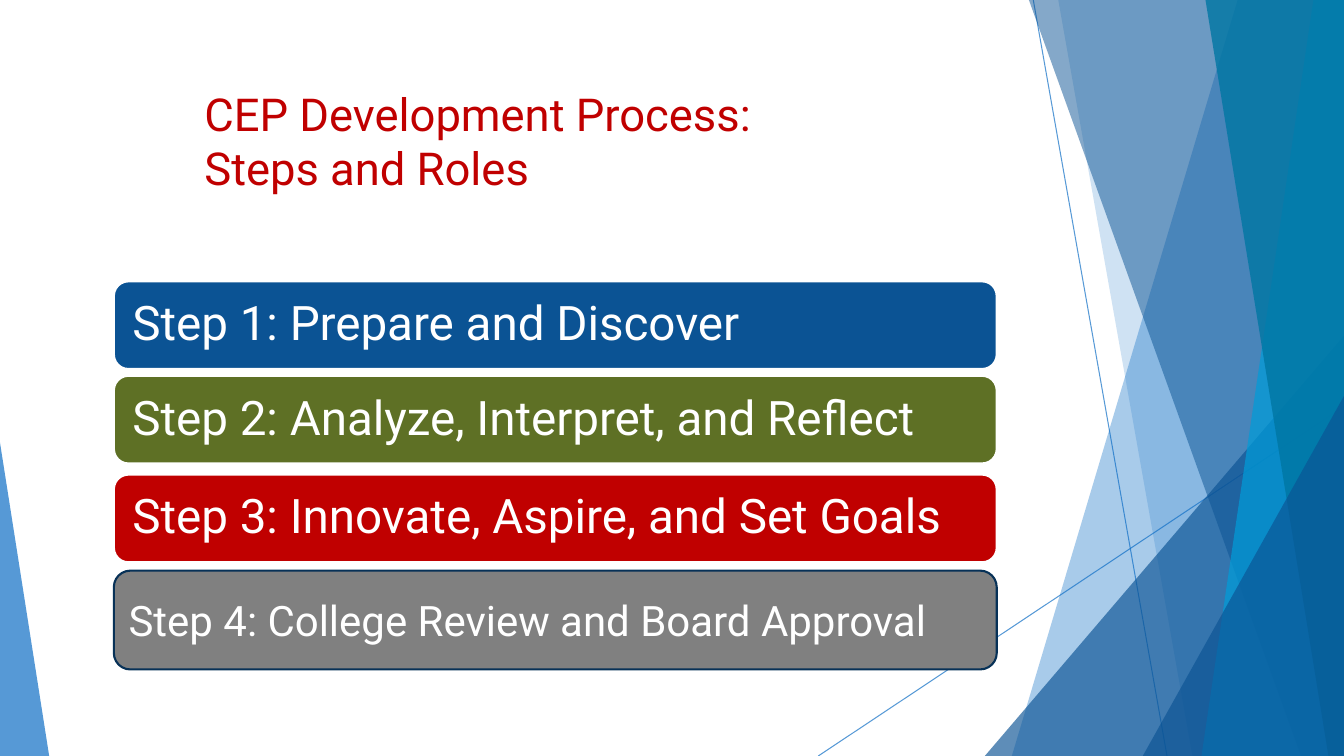
import pptx
import pptx.dml.color
import pptx.enum.shapes
import pptx.enum.text
import pptx.oxml.ns
import pptx.util
from lxml import etree
from pptx.util import Cm

WIDTH, HEIGHT = 33.87, 19.05
FONT = "Roboto"
COLOURS = {
    "blue": "0F6FC6",
    "navy": "0B5394",
    "cyan": "009DD9",
    "teal": "0076A3",
    "olive": "5E7025",
    "red": "C00000",
    "grey": "808080",
    "ink": "073157",
    "white": "FFFFFF",
}
# x at the top, x at the bottom, colour, opacity; each runs to the right edge
FACETS_BEHIND = [
    (31.19, 25.5, "blue", 36),
    (26.67, 30.05, "blue", 20),
]
FACETS_FRONT = [
    (25.93, 32.79, "navy", 50),
    (33.1, 30.28, "cyan", 70),
    (30.38, 33.48, "teal", 80),
]
# text, top, height, fill, outline, text size, side inset, line spacing
STEPS = [
    ("Step 1: Prepare and Discover", 7.09, 2.21, "navy", "white", 34, 0.36, 0.9),
    ("Step 2: Analyze, Interpret, and Reflect", 9.47, 2.21, "olive", "white", 34, 0.36, 0.9),
    ("Step 3: Innovate, Aspire, and Set Goals", 11.96, 2.21, "red", "white", 34, 0.36, 0.9),
    ("Step 4: College Review and Board Approval", 14.38, 2.49, "grey", "ink", 30, 0.25, 1.0),
]


def paint(colour_format, colour, opacity=100):
    """Set a solid colour on a fill, with its opacity in percent."""
    colour_format.solid()
    colour_format.fore_color.rgb = pptx.dml.color.RGBColor.from_string(COLOURS[colour])
    if opacity < 100:
        holder = colour_format.fore_color._xFill[0]
        alpha = etree.SubElement(holder, pptx.oxml.ns.qn("a:alpha"))
        alpha.set("val", str(opacity * 1000))


def write_text(frame, text, size, colour, spacing=1.0, inset=0.25):
    """Fill a frame with one left-aligned paragraph, broken at newlines."""
    frame.word_wrap = True
    frame.auto_size = pptx.enum.text.MSO_AUTO_SIZE.NONE
    frame.vertical_anchor = pptx.enum.text.MSO_ANCHOR.MIDDLE
    frame.margin_left = frame.margin_right = Cm(inset)
    para = frame.paragraphs[0]
    para.alignment = pptx.enum.text.PP_ALIGN.LEFT
    para.line_spacing = spacing
    for number, line in enumerate(text.split("\n")):
        if number:
            para.add_line_break()
        span = para.add_run()
        span.text = line
        span.font.name = FONT
        span.font.size = pptx.util.Pt(size)
        span.font.color.rgb = pptx.dml.color.RGBColor.from_string(COLOURS[colour])


def add_ray(slide, start, end):
    """Add a thin translucent line across the background."""
    ray = slide.shapes.add_connector(
        pptx.enum.shapes.MSO_CONNECTOR.STRAIGHT, *map(Cm, start + end)
    )
    ray.line.width = pptx.util.Pt(0.75)
    paint(ray.line.fill, "blue", 70)
    etree.SubElement(ray._element.spPr, pptx.oxml.ns.qn("a:effectLst"))


def finish_facet(facet, colour, opacity):
    paint(facet.fill, colour, opacity)
    facet.line.fill.background()
    facet.shadow.inherit = False


def add_facet(slide, top_x, bottom_x, colour, opacity):
    """Add a full-height facet between a slanted side and the right edge."""
    outline = slide.shapes.build_freeform(Cm(top_x), Cm(0))
    corners = [(WIDTH, 0), (WIDTH, HEIGHT), (bottom_x, HEIGHT)]
    outline.add_line_segments([(Cm(x), Cm(y)) for x, y in corners], close=True)
    finish_facet(outline.convert_to_shape(), colour, opacity)


def add_corner(slide, left, top, width, apex, colour, opacity):
    """Add a right triangle standing on the bottom edge; apex is 0 or 1."""
    corner = slide.shapes.add_shape(
        pptx.enum.shapes.MSO_SHAPE.ISOSCELES_TRIANGLE,
        Cm(left), Cm(top), Cm(width), Cm(HEIGHT - top),
    )
    corner.adjustments[0] = apex
    finish_facet(corner, colour, opacity)


def add_background(slide):
    add_ray(slide, (26.04, 0), (29.41, HEIGHT))
    add_ray(slide, (WIDTH, 10.24), (20.62, HEIGHT))
    for facet in FACETS_BEHIND:
        add_facet(slide, *facet)
    add_corner(slide, 24.82, 8.46, WIDTH - 24.82, 1, "navy", 66)
    for facet in FACETS_FRONT:
        add_facet(slide, *facet)
    add_corner(slide, 28.8, 9.98, WIDTH - 28.8, 1, "navy", 66)
    add_corner(slide, 0, 11.15, 1.24, 0, "blue", 70)


def add_title(slide, text):
    title = slide.shapes.title
    title.left, title.top, title.width, title.height = map(Cm, (4.9, 1.9, 21.03, 3.28))
    write_text(title.text_frame, text, 32.4, "red")


def add_step(slide, text, top, height, fill, outline, size, inset, spacing):
    step = slide.shapes.add_shape(
        pptx.enum.shapes.MSO_SHAPE.ROUNDED_RECTANGLE,
        Cm(2.87), Cm(top), Cm(22.25), Cm(height),
    )
    step.shadow.inherit = False
    paint(step.fill, fill)
    paint(step.line.fill, outline)
    step.line.width = pptx.util.Pt(1.5)
    write_text(step.text_frame, text, size, "white", spacing, inset)


def main():
    deck = pptx.Presentation()
    deck.slide_width, deck.slide_height = Cm(WIDTH), Cm(HEIGHT)
    slide = deck.slides.add_slide(deck.slide_layouts.get_by_name("Title Only"))
    add_background(slide)
    add_title(slide, "CEP Development Process:\nSteps and Roles")
    for step in STEPS:
        add_step(slide, *step)
    deck.save("out.pptx")


if __name__ == "__main__":
    main()
